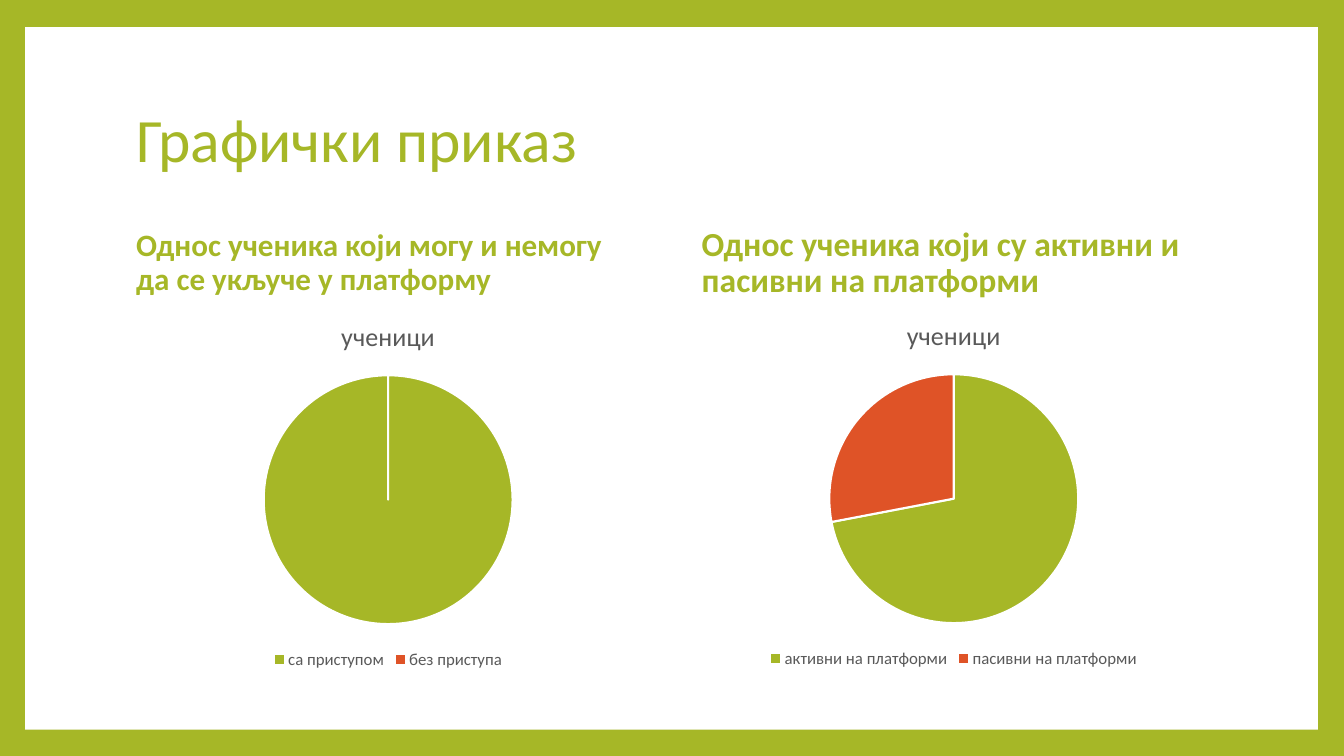
from pptx import Presentation
from pptx.chart.data import CategoryChartData
from pptx.dml.color import RGBColor
from pptx.enum import chart as charts, shapes, text
from pptx.util import Inches, Pt

GREEN = RGBColor(0xA6, 0xB7, 0x27)
ORANGE = RGBColor(0xDF, 0x53, 0x27)
GRAY = RGBColor(0x59, 0x59, 0x59)
BLACK = RGBColor(0, 0, 0)
WHITE = RGBColor(0xFF, 0xFF, 0xFF)
FONT = "Calibri"
COLUMN_WIDTH = 5.2

# Left edge, heading, heading size, heading placeholder, chart top, shares
COLUMNS = [
    (1.25, "Однос ученика који могу и немогу да се укључе у платформу", 22.2, 1,
     2.98, {"са приступом": 100, "без приступа": 0}),
    (6.86, "Однос ученика који су активни и пасивни на платформи", 24, 3,
     2.97, {"активни на платформи": 72, "пасивни на платформи": 28}),
]


def style_font(font, size, color, bold=False):
    font.name, font.size, font.bold = FONT, Pt(size), bold
    font.color.rgb = color


def add_panel(slide):
    panel = slide.shapes.add_shape(
        shapes.MSO_SHAPE.RECTANGLE,
        Inches(0.25), Inches(0.27), Inches(12.82), Inches(6.97))
    panel.shadow.inherit = False
    panel.fill.solid()
    panel.fill.fore_color.rgb = WHITE
    panel.line.fill.background()
    # Send behind the placeholders
    slide.shapes.element.insert(2, panel.element)


def fill_placeholder(holder, box, wording, size, bold=False):
    holder.left, holder.top, holder.width, holder.height = map(Inches, box)
    frame = holder.text_frame
    frame.text = wording
    frame.word_wrap = True
    frame.auto_size = text.MSO_AUTO_SIZE.NONE
    frame.vertical_anchor = text.MSO_ANCHOR.MIDDLE
    paragraph = frame.paragraphs[0]
    paragraph.alignment = text.PP_ALIGN.LEFT
    paragraph.line_spacing = 0.9
    paragraph.space_before = Pt(0)
    style_font(paragraph.font, size, GREEN, bold)


def add_pie(slide, left, top, shares):
    data = CategoryChartData()
    data.categories = list(shares)
    data.add_series("ученици", list(shares.values()))
    pie = slide.shapes.add_chart(
        charts.XL_CHART_TYPE.PIE, Inches(left), Inches(top),
        Inches(COLUMN_WIDTH), Inches(3.7), data).chart
    style_font(pie.font, 10, BLACK)

    pie.has_title = True
    pie.chart_title.text_frame.text = "ученици"
    style_font(pie.chart_title.text_frame.paragraphs[0].font, 18.6, GRAY)
    pie.chart_title.include_in_layout = False

    pie.has_legend = True
    pie.legend.position = charts.XL_LEGEND_POSITION.BOTTOM
    pie.legend.include_in_layout = False
    style_font(pie.legend.font, 12, GRAY)

    pie.plots[0].vary_by_categories = True
    for index, color in enumerate((GREEN, ORANGE)):
        piece = pie.plots[0].series[0].points[index].format
        piece.fill.solid()
        piece.fill.fore_color.rgb = color
        piece.line.color.rgb = WHITE
        piece.line.width = Pt(1.5)


def main():
    deck = Presentation()
    deck.slide_width, deck.slide_height = Inches(13.33), Inches(7.5)
    slide = deck.slides.add_slide(deck.slide_layouts.get_by_name("Comparison"))

    # Green border around a white panel
    slide.background.fill.solid()
    slide.background.fill.fore_color.rgb = GREEN
    add_panel(slide)

    # Title
    fill_placeholder(slide.shapes.title, (1.25, 0.67, 10.8, 1.48),
                     "Графички приказ", 44)

    # Headings with their charts
    holders = {h.placeholder_format.idx: h for h in slide.placeholders}
    for left, heading, size, idx, chart_top, shares in COLUMNS:
        fill_placeholder(holders[idx], (left, 2.19, COLUMN_WIDTH, 0.85),
                         heading, size, bold=True)
        unused = holders[idx + 1].element
        unused.getparent().remove(unused)
        add_pie(slide, left, chart_top, shares)

    deck.save("out.pptx")


if __name__ == "__main__":
    main()
